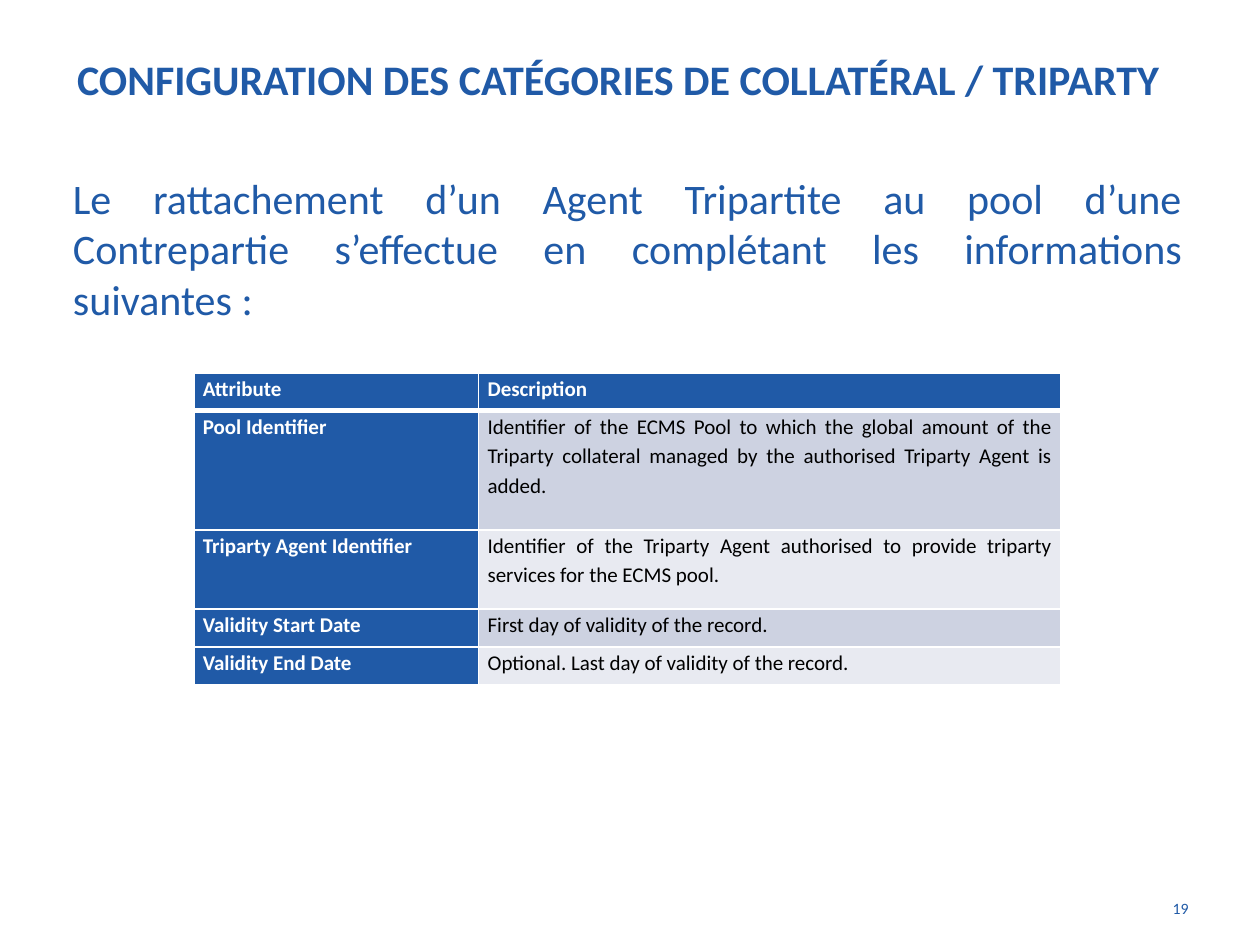
import pptx
import pptx.util
import pptx.oxml.ns
from lxml import etree
from pptx.dml.color import RGBColor
from pptx.enum.text import MSO_ANCHOR, PP_ALIGN
from pptx.util import Cm, Pt

TITLE = "CONFIGURATION DES CATÉGORIES DE COLLATÉRAL / TRIPARTY"
INTRO = ("Le rattachement d’un Agent Tripartite au pool d’une Contrepartie "
         "s’effectue en complétant les informations suivantes :")
PAGE = "19"
ROWS = [
    ("Attribute", "Description"),
    ("Pool Identifier",
     "Identifier of the ECMS Pool to which the global amount of the Triparty "
     "collateral managed by the authorised Triparty Agent is added."),
    ("Triparty Agent Identifier",
     "Identifier of the Triparty Agent authorised to provide triparty "
     "services for the ECMS pool."),
    ("Validity Start Date", "First day of validity of the record."),
    ("Validity End Date", "Optional. Last day of validity of the record."),
]
WIDTHS = [5.74, 11.74]
HEIGHTS = [0.76, 2.4, 1.6, 0.76, 0.76]

FONT = "Calibri"
BLUE = RGBColor(0x20, 0x5A, 0xA7)
WHITE = RGBColor(0xFF, 0xFF, 0xFF)
BLACK = RGBColor(0, 0, 0)
BANDS = [RGBColor(0xCD, 0xD2, 0xE1), RGBColor(0xE8, 0xEA, 0xF1)]


def write(frame, text, size, color, align, bold=False):
    frame.text = text
    frame.word_wrap = True
    para = frame.paragraphs[0]
    para.alignment = align
    font = para.runs[0].font
    font.name, font.size, font.bold = FONT, Pt(size), bold
    font.color.rgb = color
    return para


def add_text(slide, area, *style):
    box = slide.shapes.add_textbox(*map(Cm, area))
    write(box.text_frame, *style)


def edge(cell, side, width):
    """Draw one white border of a cell."""
    props = cell._tc.get_or_add_tcPr()
    line = etree.SubElement(props, pptx.oxml.ns.qn("a:ln" + side),
                            w=str(Pt(width)))
    fill = etree.SubElement(line, pptx.oxml.ns.qn("a:solidFill"))
    etree.SubElement(fill, pptx.oxml.ns.qn("a:srgbClr"), val=str(WHITE))


def fill_cell(cell, text, row, col):
    head = row == 0 or col == 0
    left = row == 0 or (row, col) == (2, 0)
    para = write(cell.text_frame, text, 12, WHITE if head else BLACK,
                 PP_ALIGN.LEFT if left else PP_ALIGN.JUSTIFY, head)
    para.line_spacing = 1.15
    para.space_after = Pt(3)
    cell.margin_left = cell.margin_right = Cm(0.18)
    cell.margin_top = cell.margin_bottom = 0
    cell.vertical_anchor = MSO_ANCHOR.TOP
    thick = {(0, "B"), (1, "T")}
    for side in "LRTB":
        edge(cell, side, 3 if (row, side) in thick else 1)
    cell.fill.solid()
    cell.fill.fore_color.rgb = BLUE if head else BANDS[(row - 1) % 2]


def add_grid(slide, left, top):
    frame = slide.shapes.add_table(len(ROWS), len(WIDTHS), Cm(left), Cm(top),
                                   Cm(sum(WIDTHS)), Cm(sum(HEIGHTS)))
    table = frame.table
    for col, width in zip(table.columns, WIDTHS):
        col.width = Cm(width)
    for row, height in zip(table.rows, HEIGHTS):
        row.height = Cm(height)
    for r, texts in enumerate(ROWS):
        for c, text in enumerate(texts):
            fill_cell(table.cell(r, c), text, r, c)


def main():
    deck = pptx.Presentation()
    deck.slide_width, deck.slide_height = Cm(25.4), Cm(19.05)
    slide = deck.slides.add_slide(deck.slide_layouts[5])

    title = slide.shapes.title
    title.left, title.top = Cm(1.3), Cm(0)
    title.width, title.height = Cm(22.86), Cm(3.18)
    write(title.text_frame, TITLE, 24, BLUE, PP_ALIGN.LEFT, True)
    title.text_frame.vertical_anchor = MSO_ANCHOR.MIDDLE

    add_text(slide, (22.71, 18, 1.5, 1), PAGE, 9, BLUE, PP_ALIGN.RIGHT)
    add_text(slide, (1.22, 3.35, 22.86, 12.57), INTRO, 24, BLUE,
             PP_ALIGN.JUSTIFY)
    add_grid(slide, 3.91, 7.52)
    deck.save("out.pptx")


if __name__ == "__main__":
    main()
